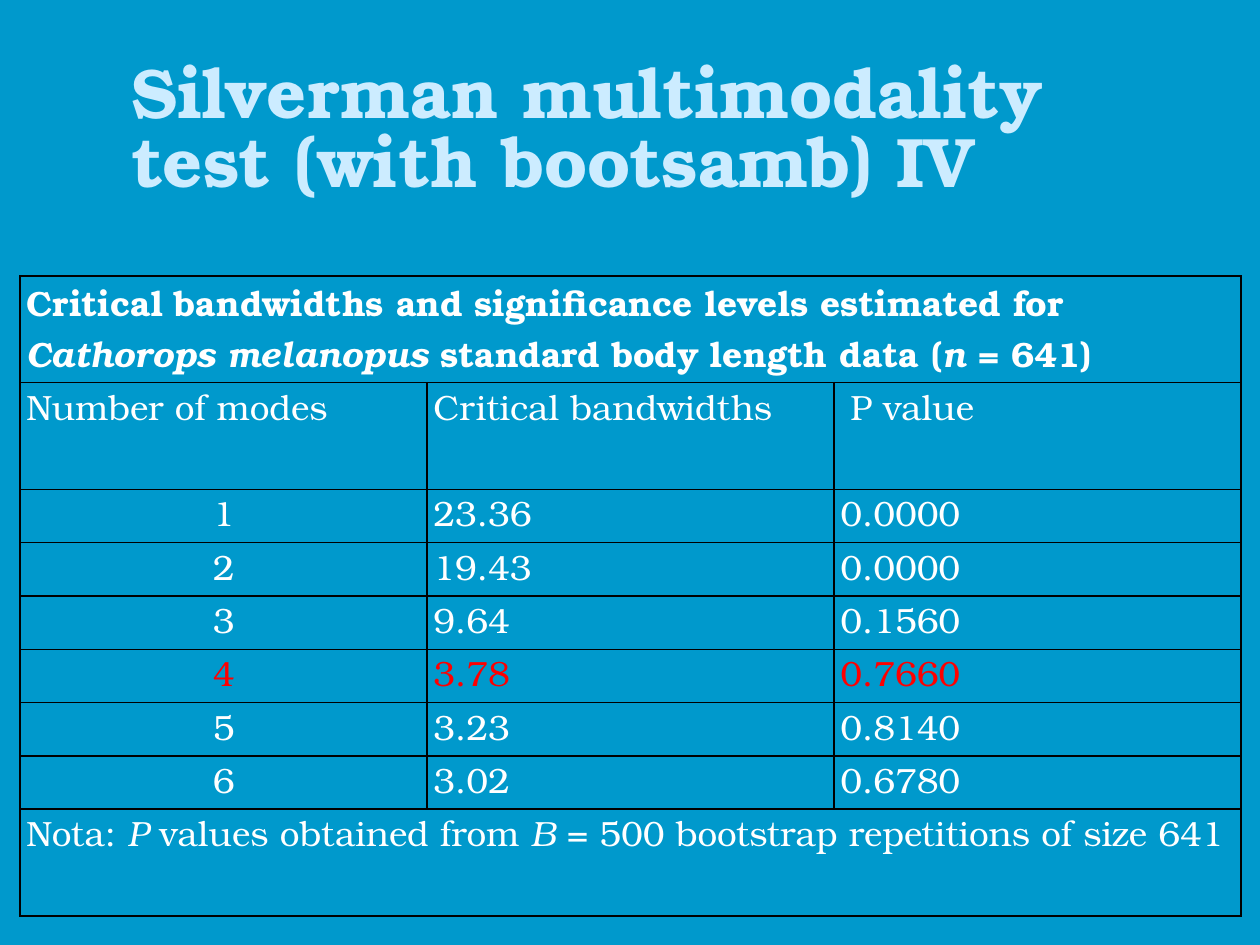
from lxml.etree import SubElement as Sub
from pptx import Presentation
from pptx.dml.color import RGBColor
from pptx.enum.text import MSO_ANCHOR as Anchor, PP_ALIGN as Align
from pptx.oxml.ns import qn
from pptx.util import Inches, Pt

WIDE, HIGH = 10, 7.5
FONT = "TeX Gyre Bonum"
WHITE, RED, BLACK, PALE, BLUE = "FFFFFF", "FF0000", "000000", "CCECFF", "0099CC"
HEADS = ["Number of modes", "Critical bandwidths", "P value"]
DATA = [
    ("1", "23.36", "0.0000"),
    ("2", "19.43", "0.0000"),
    ("3", "9.64", "0.1560"),
    ("4", "3.78", "0.7660"),
    ("5", "3.23", "0.8140"),
    ("6", "3.02", "0.6780"),
]
PEAK = "4"
TOP = ["Critical bandwidths and significance levels estimated for ",
       "Cathorops melanopus ", "standard body length data (", "n", " = 641)"]
NOTE = ["Nota: ", "P", " values obtained from ", "B",
        " = 500 bootstrap repetitions of size 641"]


def paint(color, tone):
    """Set a color format to a hex tone."""
    color.rgb = RGBColor.from_string(tone)


def write(frame, parts, size=20, tone=WHITE, bold=False, align=Align.LEFT, lead=None):
    """Write text parts into a frame, with every second part in italics."""
    para = frame.paragraphs[0]
    para.alignment = align
    if lead:
        para.line_spacing = lead
    for spot, part in enumerate(parts):
        run = para.add_run()
        run.text = part
        font = run.font
        font.name, font.size, font.bold = FONT, Pt(size), bold
        font.italic = spot % 2 == 1
        paint(font.color, tone)


def frame_cell(cell):
    """Give a cell thin black borders, small margins and no fill."""
    props = cell._tc.get_or_add_tcPr()
    for side in ("lnL", "lnR", "lnT", "lnB"):
        line = Sub(props, qn(f"a:{side}"), w=str(Pt(1)))
        fill = Sub(line, qn("a:solidFill"))
        Sub(fill, qn("a:srgbClr"), val=BLACK)
    cell.fill.background()
    cell.margin_left = cell.margin_right = Inches(0.05)
    cell.margin_top = cell.margin_bottom = 0


def add_title(slide, text):
    """Place and format the slide title."""
    title = slide.shapes.title
    title.left, title.top = Inches(0.94), Inches(0.55)
    title.width, title.height = Inches(8.42), Inches(1)
    frame = title.text_frame
    frame.word_wrap = True
    frame.vertical_anchor = Anchor.MIDDLE
    write(frame, [text], size=40, tone=PALE, bold=True, lead=0.82)


def add_grid(slide):
    """Add the table of bandwidths with its heading and note rows."""
    count, cols = len(DATA) + 3, len(HEADS)
    wide, high = 9.69, 5.08
    unit = high / (len(DATA) + 6)
    table = slide.shapes.add_table(count, cols, Inches(0.16), Inches(2.19),
                                   Inches(wide), Inches(high)).table
    table.first_row = table.horz_banding = False
    for col in table.columns:
        col.width = Inches(wide / cols)
    for spot, row in enumerate(table.rows):
        row.height = Inches(unit if 2 <= spot < count - 1 else 2 * unit)
        for cell in row.cells:
            frame_cell(cell)
    for spot, parts, bold in ((0, TOP, True), (count - 1, NOTE, False)):
        cell = table.cell(spot, 0)
        cell.merge(table.cell(spot, cols - 1))
        write(cell.text_frame, parts, bold=bold)
    for col, head in enumerate(HEADS):
        write(table.cell(1, col).text_frame, [head])
    table.cell(1, cols - 1).margin_left = Inches(0.13)
    for spot, vals in enumerate(DATA, 2):
        tone = RED if vals[0] == PEAK else WHITE
        for col, val in enumerate(vals):
            align = Align.LEFT if col else Align.CENTER
            write(table.cell(spot, col).text_frame, [val], tone=tone, align=align)


def main():
    """Build and save the slide."""
    deck = Presentation()
    deck.slide_width, deck.slide_height = Inches(WIDE), Inches(HIGH)
    slide = deck.slides.add_slide(deck.slide_layouts[5])
    fill = slide.background.fill
    fill.solid()
    paint(fill.fore_color, BLUE)
    add_title(slide, "Silverman multimodality test (with bootsamb) IV")
    add_grid(slide)
    deck.save("out.pptx")


if __name__ == "__main__":
    main()
